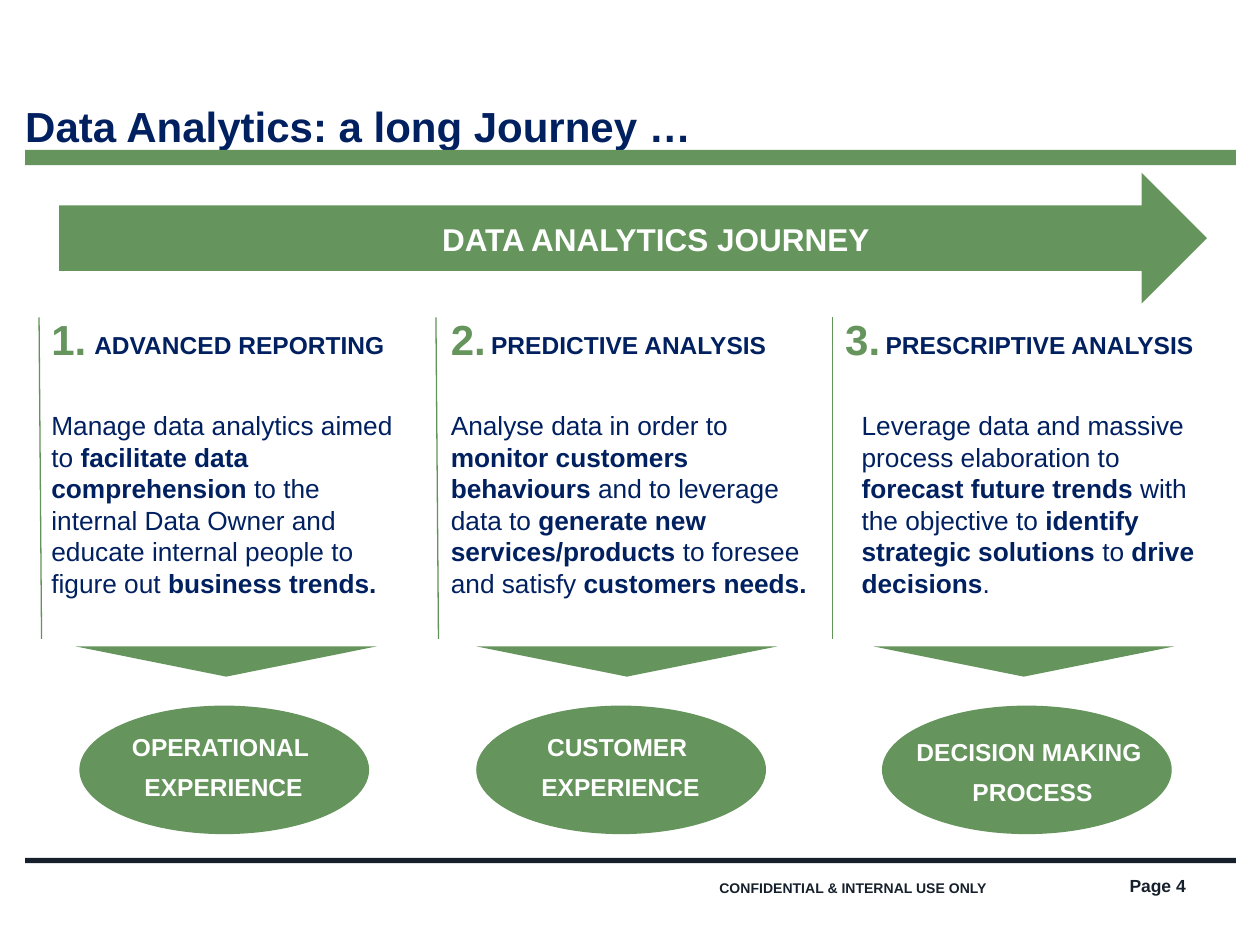
from pptx import Presentation
from pptx.dml.color import RGBColor
from pptx.enum.shapes import MSO_CONNECTOR, MSO_SHAPE
from pptx.enum.text import MSO_ANCHOR, MSO_AUTO_SIZE, PP_ALIGN
from pptx.oxml.ns import qn
from pptx.util import Inches, Pt
from lxml.etree import SubElement

GREEN, NAVY, DARK, WHITE = "65955C", "002060", "16202C", "FFFFFF"
STEPS = [
    dict(title="ADVANCED REPORTING", left=0.31, head=0.65, body=0.31, width=2.97,
         rule=(0.31, 0.33), wedge=0.6, oval=0.63, label=(0.29, 5.76),
         goal=["OPERATIONAL ", "EXPERIENCE"],
         text="Manage data analytics aimed to **facilitate data comprehension **to the "
              "internal Data Owner and educate internal people to figure out** business trends.**"),
    dict(title="PREDICTIVE ANALYSIS", left=3.48, head=3.8, body=3.48, width=3.06,
         rule=(3.46, 3.48), wedge=3.78, oval=3.78, label=(3.44, 5.76),
         goal=["CUSTOMER ", "EXPERIENCE"],
         text="Analyse data in order to **monitor customers behaviours **and to leverage "
              "data to **generate new services/products **to foresee and satisfy "
              "**customers needs.**"),
    dict(title="PRESCRIPTIVE ANALYSIS", left=6.61, head=6.93, body=6.74, width=2.87,
         rule=(6.61, 6.61), wedge=6.93, oval=7, label=(6.71, 5.8),
         goal=["DECISION MAKING ", "PROCESS"],
         text="Leverage data and massive process elaboration to **forecast future trends** "
              "with the objective to **identify strategic solutions **to **drive decisions**."),
]


def color(code):
    return RGBColor.from_string(code)


class Deck:
    font = "Arial"

    def __init__(self, wide, high):
        self.file = Presentation()
        self.file.slide_width, self.file.slide_height = Inches(wide), Inches(high)
        self.slide = self.file.slides.add_slide(self.file.slide_layouts[5])

    def style(self, para, size, tint, bold=True, align=PP_ALIGN.LEFT, after=0):
        para.alignment = align
        para.space_after = Pt(after)
        font = para.font
        font.name, font.size, font.bold = self.font, Pt(size), bold
        font.color.rgb = color(tint)

    def bare(self, frame, anchor):
        frame.margin_left = frame.margin_right = 0
        frame.margin_top = frame.margin_bottom = 0
        frame.vertical_anchor = anchor

    def title(self, text, box, size, tint):
        shape = self.slide.shapes.title
        shape.left, shape.top, shape.width, shape.height = map(Inches, box)
        frame = shape.text_frame
        frame.text = text
        frame.auto_size = MSO_AUTO_SIZE.NONE
        self.bare(frame, MSO_ANCHOR.TOP)
        self.style(frame.paragraphs[0], size, tint)

    def text(self, lines, box, size, tint, bare=False, **look):
        frame = self.slide.shapes.add_textbox(*map(Inches, box)).text_frame
        frame.word_wrap = True
        if bare:
            self.bare(frame, MSO_ANCHOR.MIDDLE)
        for num, line in enumerate(lines):
            para = frame.add_paragraph() if num else frame.paragraphs[0]
            parts = line.split("**")
            for spot, part in enumerate(parts):
                if part:
                    run = para.add_run()
                    run.text = part
                    if len(parts) > 1:
                        run.font.bold = spot % 2 == 1
            self.style(para, size, tint, **look)

    def shape(self, kind, box, fill, turn=0):
        shape = self.slide.shapes.add_shape(kind, *map(Inches, box))
        shape.shadow.inherit = False
        shape.fill.solid()
        shape.fill.fore_color.rgb = color(fill)
        shape.line.fill.background()
        shape.rotation = turn

    def line(self, start, end, tint, width):
        line = self.slide.shapes.add_connector(
            MSO_CONNECTOR.STRAIGHT, *map(Inches, start + end))
        line.line.color.rgb = color(tint)
        line.line.width = Pt(width)
        SubElement(line._element.spPr, qn("a:effectLst"))

    def step(self, num, step):
        self.shape(MSO_SHAPE.OVAL, (step["oval"], 5.6, 2.3, 1.02), GREEN)
        self.shape(MSO_SHAPE.ISOSCELES_TRIANGLE, (step["wedge"], 5.13, 2.39, 0.24),
                   GREEN, turn=180)
        top, base = step["rule"]
        self.line((top, 2.52), (base, 5.07), "629359", 0.75)
        self.text([f"{num}."], (step["left"], 2.44, 1.36, 0.5), 24, GREEN)
        self.text([step["title"]], (step["head"], 2.57, 2.97, 0.34), 14, NAVY, after=6)
        self.text([step["text"]], (step["body"], 3.2, step["width"], 1.62), 15, NAVY,
                  bold=False, after=6)
        self.text(step["goal"], step["label"] + (2.97, 0.66), 14, WHITE,
                  align=PP_ALIGN.CENTER, after=6)


def main():
    deck = Deck(10, 7.5)
    deck.shape(MSO_SHAPE.RECTANGLE, (0.2, 1.19, 9.61, 0.12), GREEN)
    deck.shape(MSO_SHAPE.RECTANGLE, (0.2, 6.81, 9.61, 0.04), DARK)
    deck.title("Data Analytics: a long Journey …", (0.2, 0.8, 7.17, 0.39), 24, NAVY)
    deck.shape(MSO_SHAPE.RIGHT_ARROW, (0.47, 1.37, 9.11, 1.04), GREEN)
    deck.text(["DATA ANALYTICS JOURNEY"], (3.41, 1.7, 4.52, 0.4), 18, WHITE, after=6)
    for num, step in enumerate(STEPS, 1):
        deck.step(num, step)
    deck.text(["CONFIDENTIAL & INTERNAL USE ONLY"], (5.71, 7, 2.56, 0.09), 8, DARK,
              bare=True)
    deck.text(["Page 4"], (8.62, 6.95, 0.79, 0.16), 10, DARK, bare=True,
              align=PP_ALIGN.RIGHT)
    deck.file.save("out.pptx")


if __name__ == "__main__":
    main()
